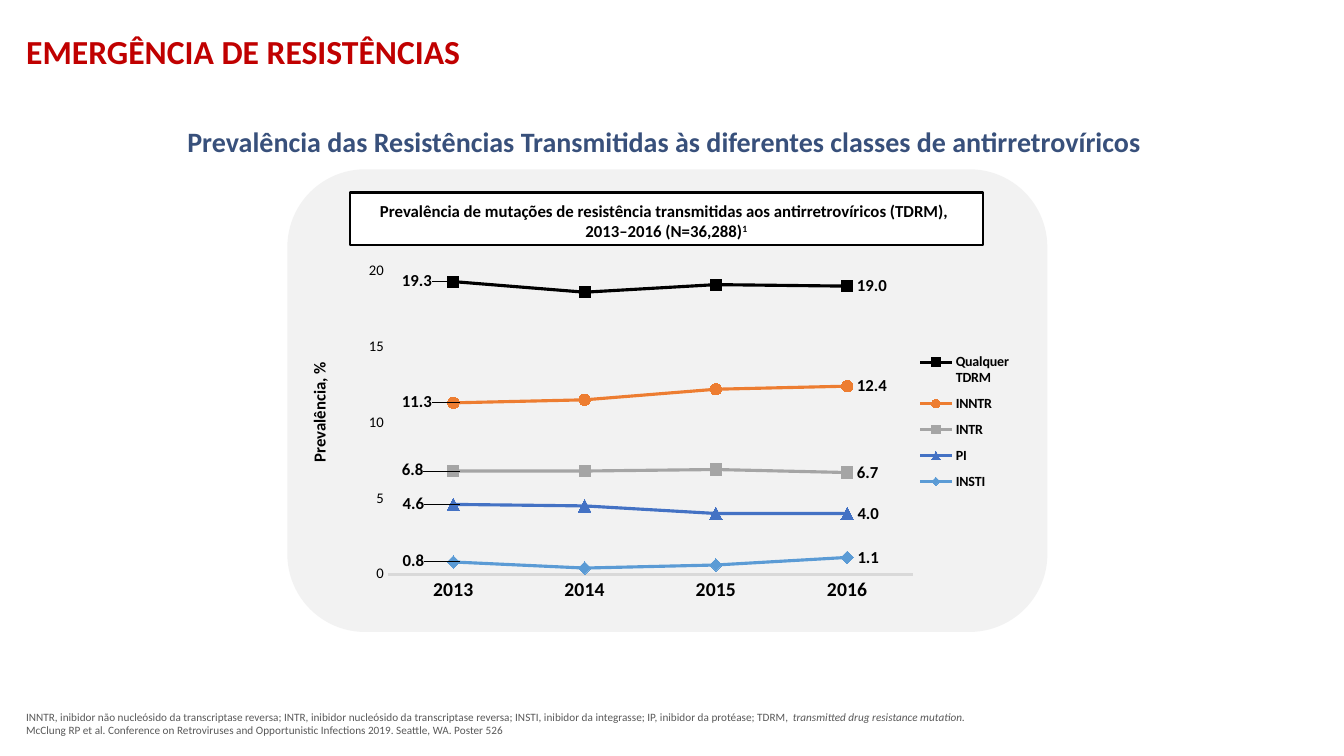
import pptx
import pptx.chart.data
import pptx.dml.color
import pptx.enum.chart
import pptx.enum.shapes
import pptx.enum.text
import pptx.oxml
import pptx.oxml.ns
import pptx.util

Pt = pptx.util.Pt
Marker = pptx.enum.chart.XL_MARKER_STYLE
Anchor = pptx.enum.text.MSO_ANCHOR
Align = pptx.enum.text.PP_ALIGN
AutoShape = pptx.enum.shapes.MSO_SHAPE

FONT = "Calibri"
YEARS = ["2013", "2014", "2015", "2016"]
DRUG_CLASSES = [
    ("Qualquer TDRM", (19.3, 18.6, 19.1, 19.0), "000000", Marker.SQUARE, 8),
    ("INNTR", (11.3, 11.5, 12.2, 12.4), "ED7D31", Marker.CIRCLE, 8),
    ("INTR", (6.8, 6.8, 6.9, 6.7), "A5A5A5", Marker.SQUARE, 8),
    ("PI", (4.6, 4.5, 4.0, 4.0), "4472C4", Marker.TRIANGLE, 9),
    ("INSTI", (0.8, 0.4, 0.6, 1.1), "5B9BD5", Marker.DIAMOND, 9),
]


def rgb(code):
    """Turn a hex string into a colour."""
    return pptx.dml.color.RGBColor.from_string(code)


def set_font(font, size, color="000000", bold=False):
    """Give a font the slide's typeface with size, colour and weight."""
    font.name = FONT
    font.size = Pt(size)
    font.bold = bold
    font.color.rgb = rgb(color)


def set_line(line, color, width):
    """Set the colour and width of a line."""
    line.color.rgb = rgb(color)
    line.width = Pt(width)


def place(shape, left, top, width, height):
    """Move and size a shape in points."""
    shape.left, shape.top = Pt(left), Pt(top)
    shape.width, shape.height = Pt(width), Pt(height)


def write(shape, paragraphs, size, color="000000", bold=False,
          align=Align.LEFT, anchor=Anchor.TOP):
    """Fill a shape with paragraphs, each a list of run texts, and return the runs."""
    frame = shape.text_frame
    frame.word_wrap = True
    frame.vertical_anchor = anchor
    runs = []
    for index, texts in enumerate(paragraphs):
        paragraph = frame.add_paragraph() if index else frame.paragraphs[0]
        paragraph.alignment = align
        set_font(paragraph.font, size, color, bold)
        for text in texts:
            run = paragraph.add_run()
            run.text = text
            runs.append(run)
    return runs


def add_text(slide, box, paragraphs, size, **style):
    """Add a text box and return it with its runs."""
    textbox = slide.shapes.add_textbox(*map(Pt, box))
    return textbox, write(textbox, paragraphs, size, **style)


def add_panel(slide, kind, box, fill, line):
    """Add a filled, outlined panel."""
    panel = slide.shapes.add_shape(kind, *map(Pt, box))
    panel.shadow.inherit = False
    panel.fill.solid()
    panel.fill.fore_color.rgb = rgb(fill)
    set_line(panel.line, line, 1.5)


def manual_layout(modes, **fractions):
    """Build a manual chart layout from fractions of the chart area."""
    parts = {**modes, **fractions}
    children = "".join(f'<c:{name} val="{value}"/>' for name, value in parts.items())
    return pptx.oxml.parse_xml(
        f'<c:layout {pptx.oxml.ns.nsdecls("c")}>'
        f"<c:manualLayout>{children}</c:manualLayout></c:layout>")


def label_point(series, index, shift=None):
    """Show a point's value at its right, or shifted by a fraction of the chart width."""
    label = series.points[index].data_label
    set_font(label.font, 12, bold=True)
    label.position = pptx.enum.chart.XL_LABEL_POSITION.RIGHT
    element = label.font._element.getparent().getparent().getparent().getparent()
    number_format = pptx.oxml.parse_xml(
        f'<c:numFmt {pptx.oxml.ns.nsdecls("c")} formatCode="0.0" sourceLinked="0"/>')
    element.insert(1, number_format)
    if shift is not None:
        element.insert(1, manual_layout({}, x=shift, y=-0.003))


def style_series(series, color, marker, marker_size):
    """Format one drug class and label its first and last years."""
    series.smooth = False
    set_line(series.format.line, color, 2.25)
    series.marker.style = marker
    series.marker.size = marker_size
    series.marker.format.fill.solid()
    series.marker.format.fill.fore_color.rgb = rgb(color)
    set_line(series.marker.format.line, color, 0.75)
    series.data_labels.show_value = False
    label_point(series, 0, shift=-0.09)
    label_point(series, len(YEARS) - 1)


def style_axes(chart):
    """Format the year axis and the prevalence axis."""
    years, prevalence = chart.category_axis, chart.value_axis
    for axis in (years, prevalence):
        axis.has_major_gridlines = False
        axis.major_tick_mark = pptx.enum.chart.XL_TICK_MARK.NONE
        axis.minor_tick_mark = pptx.enum.chart.XL_TICK_MARK.NONE
    set_font(years.tick_labels.font, 14, bold=True)
    set_line(years.format.line, "D9D9D9", 2.25)
    set_font(prevalence.tick_labels.font, 10.5)
    prevalence.tick_labels.number_format = "0"
    prevalence.tick_labels.number_format_is_linked = False
    prevalence.format.line.fill.background()
    prevalence.minimum_scale, prevalence.maximum_scale = 0, 20
    prevalence.major_unit = 5


def add_prevalence_chart(slide, box):
    """Add the line chart of prevalence by drug class."""
    data = pptx.chart.data.CategoryChartData(number_format="0.0")
    data.categories = YEARS
    for name, values, *_ in DRUG_CLASSES:
        data.add_series(name, values)
    chart = slide.shapes.add_chart(
        pptx.enum.chart.XL_CHART_TYPE.LINE_MARKERS, *map(Pt, box), data).chart
    set_font(chart.font, 10)
    chart.has_title = False
    plot = chart.plots[0]
    plot.vary_by_categories = False
    for series, (_, _, *look) in zip(plot.series, DRUG_CLASSES):
        style_series(series, *look)
    style_axes(chart)

    chart.has_legend = True
    legend = chart.legend
    legend.position = pptx.enum.chart.XL_LEGEND_POSITION.BOTTOM
    legend.include_in_layout = False
    set_font(legend.font, 10, bold=True)
    edges = {"xMode": "edge", "yMode": "edge"}
    for old in legend._element.findall(pptx.oxml.ns.qn("c:layout")):
        legend._element.remove(old)
    legend._element.find(pptx.oxml.ns.qn("c:legendPos")).addnext(
        manual_layout(edges, x=0.82, y=0.23, w=0.17, h=0.41))
    plot_area = plot._element.getparent()
    for old in plot_area.findall(pptx.oxml.ns.qn("c:layout")):
        plot_area.remove(old)
    plot_area.insert(0, manual_layout(
        {"layoutTarget": "inner", **edges}, x=0.056, y=0.037, w=0.773, h=0.8))


def main():
    """Build the slide on emerging resistance."""
    deck = pptx.Presentation()
    deck.slide_width, deck.slide_height = Pt(960), Pt(540)
    slide = deck.slides.add_slide(deck.slide_layouts[5])

    title = slide.shapes.title
    place(title, 11.5, 18.7, 548.6, 36)
    write(title, [["EMERGÊNCIA DE RESISTÊNCIAS"]], 24, "C00000", True)

    add_panel(slide, AutoShape.ROUNDED_RECTANGLE,
              (206, 121.7, 541.4, 329), "F2F2F2", "F2F2F2")
    _, notes = add_text(slide, (11.5, 496, 962, 34), [
        ["INNTR, inibidor não nucleósido da transcriptase reversa; "
         "INTR, inibidor nucleósido da transcriptase reversa; "
         "INSTI, inibidor da integrasse; IP, inibidor da protéase; TDRM, ",
         "transmitted drug resistance mutation."],
        ["McClung RP et al. Conference on Retroviruses and Opportunistic "
         "Infections 2019. Seattle, WA. Poster 526"],
    ], 8, color="595959", anchor=Anchor.BOTTOM)
    notes[1].font.italic = True

    add_prevalence_chart(slide, (249.8, 183.6, 485.3, 270.7))
    axis_title, _ = add_text(slide, (141.8, 283.7, 172, 21.6), [["Prevalência, %"]], 12,
                             bold=True, align=Align.CENTER, anchor=Anchor.MIDDLE)
    axis_title.rotation = 270

    add_panel(slide, AutoShape.RECTANGLE, (249.8, 137.5, 452.2, 37.4), "FFFFFF", "000000")
    _, heading = add_text(slide, (249.8, 139.7, 452.2, 36), [
        ["Prevalência de mutações de resistência transmitidas aos antirretrovíricos (TDRM), "],
        ["2013–2016 (N=36,288)", "1"],
    ], 12, bold=True, align=Align.CENTER)
    heading[-1].font._element.set("baseline", "30000")

    add_text(slide, (126.7, 85.7, 752.4, 31.7),
             [["Prevalência das Resistências Transmitidas às diferentes "
               "classes de antirretrovíricos"]], 20, color="38507B", bold=True)
    deck.save("out.pptx")


if __name__ == "__main__":
    main()
